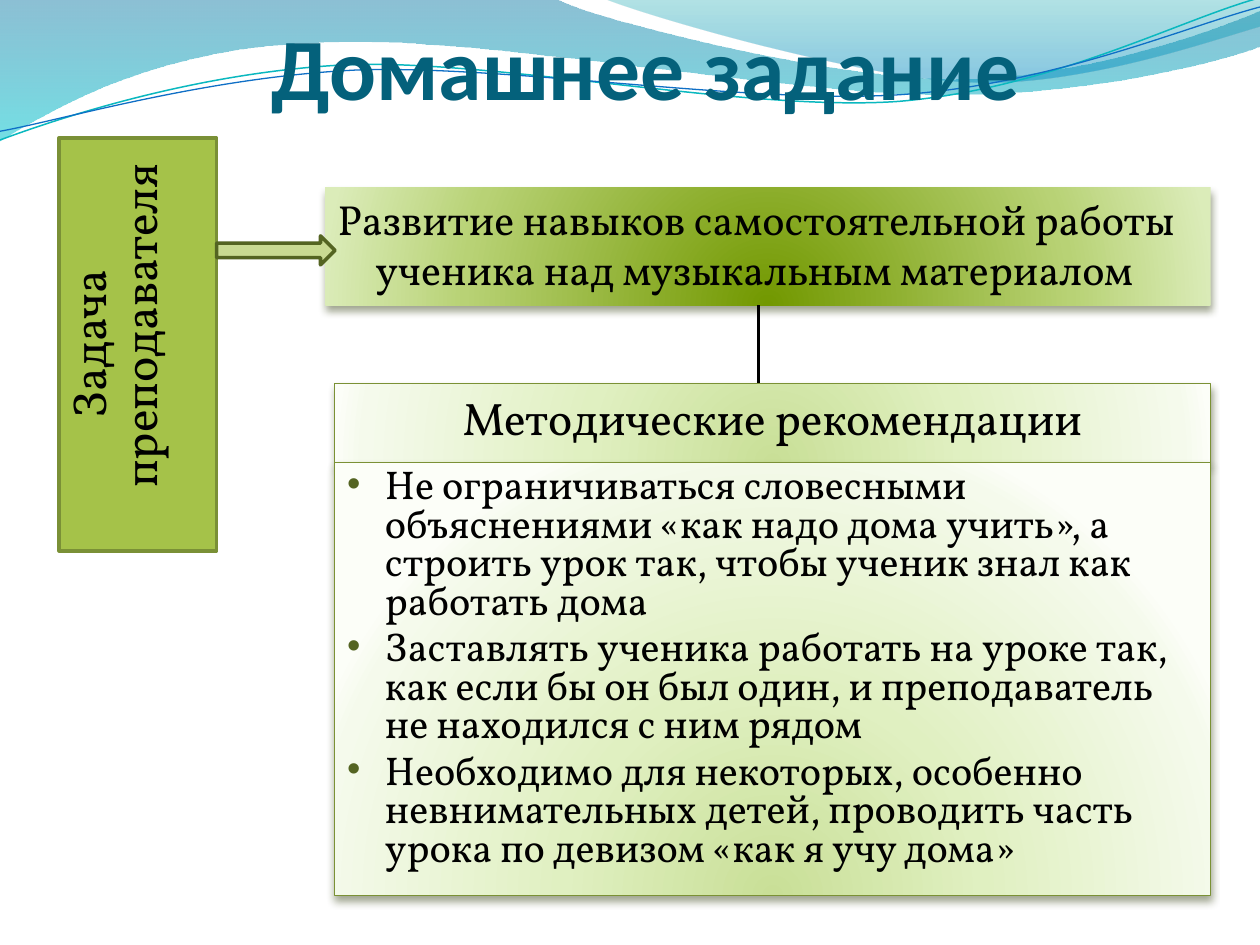
from lxml import etree
from pptx import Presentation
from pptx import util as u
from pptx.dml import color
from pptx.enum import shapes, text
from pptx.oxml import ns

Pt = u.Pt
SANS, SERIF = "Calibri", "Vollkorn"
HUE = {
    "title": "04617B", "ink": "000000", "task": "A5C249", "edge": "7A9036",
    "arrow": "C9DA92", "dark": "546422", "rim": "7B9135",
    "teal": "0AB8BF", "blue": "0F6FC6", "shade": "3A4519",
}
GOAL = [(0, "729800"), (68, "B8D275"), (100, "DBECB9")]
PALE = [(0, "C9DF97"), (43, "E0F0C1"), (93, "F5FAEC"), (100, "FCFEF8")]
WAVES = [
    ([(0, 0), (317, -1), (343, 12, 478, 45, 546, 45), (614, 45, 690, 19, 720, 6),
      (721, 26), (708, 32, 626, 55, 537, 54), (447, 54, 275, 20, 185, 24),
      (93, 26, 33, 60, -1, 81)], [(0, "0074A1", 45), (100, "00C6CF", 55)]),
    ([(345, -1), (366, 8, 491, 45, 554, 47), (616, 50, 692, 23, 720, 15),
      (720, 0)], [(0, "00A1A9", 30), (80, "008BBF", 45)]),
]
CURVES = [
    ([(0, 80), (35, 67, 114, 41, 199, 37), (284, 34, 427, 64, 513, 58),
      (600, 51, 675, 11, 719, -1)], "teal", 0.85),
    ([(0, 75), (34, 69, 118, 44, 204, 40), (290, 37, 430, 60, 516, 54),
      (602, 48, 678, 15, 720, 4)], "blue", 0.75),
]
TIPS = [
    "Не ограничиваться словесными объяснениями «как надо дома учить», а строить урок так, чтобы ученик знал как работать дома",
    "Заставлять ученика работать на уроке так, как если бы он был один, и преподаватель не находился с ним рядом",
    "Необходимо для некоторых, особенно невнимательных детей, проводить часть урока по девизом «как я учу дома»",
]


def rgb(key):
    """Return the named colour."""
    return color.RGBColor.from_string(HUE[key])


def sub(up, tag, **attrs):
    """Append a drawing element with its attributes."""
    return etree.SubElement(up, ns.qn("a:" + tag), {k: str(v) for k, v in attrs.items()})


def fade(shape, stops, glow=False):
    """Fill a shape with a vertical or a circular gradient."""
    shape.fill.gradient()
    grad = shape._element.spPr.find(ns.qn("a:gradFill"))
    for kid in list(grad):
        grad.remove(kid)
    row = sub(grad, "gsLst")
    for pos, val, *alpha in stops:
        tone = sub(sub(row, "gs", pos=pos * 1000), "srgbClr", val=val)
        for part in alpha:
            sub(tone, "alpha", val=part * 1000)
    if glow:
        way = sub(grad, "path", path="circle")
        sub(way, "fillToRect", l=50000, t=130000, r=50000, b=-30000)
    else:
        sub(grad, "lin", ang=5400000, scaled=1)


def edge(shape, key=None, width=1):
    """Outline a shape, or clear its outline when no colour is given."""
    shape.shadow.inherit = False
    if key:
        shape.line.color.rgb = rgb(key)
        shape.line.width = Pt(width)
    else:
        shape.line.fill.background()


def shade(shape):
    """Give a shape a soft shadow below it."""
    list_ = shape._element.spPr.find(ns.qn("a:effectLst"))
    cast = sub(list_, "outerShdw", blurRad=Pt(4.5), dist=Pt(3), dir=5400000, rotWithShape=0)
    sub(sub(cast, "srgbClr", val=HUE["shade"]), "alpha", val=48000)


def curve(slide, left, top, steps, close):
    """Draw an outline of straight and cubic steps from the given corner."""
    pts = [((left + x) * 100, (top + y) * 100)
           for step in steps for x, y in zip(step[::2], step[1::2])]
    pen = slide.shapes.build_freeform(*pts[0], scale=Pt(1) / 100)
    pen.add_line_segments(pts[1:], close=close)
    shape = pen.convert_to_shape()
    legs = iter(list(shape._element.iter(ns.qn("a:lnTo"))))
    for step in steps[1:]:
        first = next(legs)
        if len(step) == 6:
            first.tag = ns.qn("a:cubicBezTo")
            for _ in range(2):
                leg = next(legs)
                first.append(leg[0])
                leg.getparent().remove(leg)
    return shape


def crest(slide, left, top):
    """Draw the waves along the top and set them in the layout."""
    parts = []
    for steps, stops in WAVES:
        wave = curve(slide, left, top, steps, True)
        fade(wave, stops)
        edge(wave)
        parts.append(wave)
    for steps, key, width in CURVES:
        line = curve(slide, left, top, steps, False)
        line.fill.background()
        edge(line, key, width)
        parts.append(line)
    for part in parts:
        slide.slide_layout.shapes._spTree.append(part._element)


def head(slide, x, y, w, h):
    """Place the title above the waves."""
    title = slide.shapes.title
    title.left, title.top, title.width, title.height = map(Pt, (x, y, w, h))
    frame = title.text_frame
    frame.word_wrap = True
    frame.auto_size = text.MSO_AUTO_SIZE.NONE
    frame.vertical_anchor = text.MSO_ANCHOR.BOTTOM
    frame.margin_left = frame.margin_right = frame.margin_bottom = 0
    frame.margin_top = Pt(3.6)
    para = frame.paragraphs[0]
    para.alignment = text.PP_ALIGN.CENTER
    write(para, "Домашнее задание", 50, "title", SANS, True)


def write(para, words, size, key="ink", face=SERIF, bold=False):
    """Add one formatted run to a paragraph."""
    run = para.add_run()
    run.text = words
    font = run.font
    font.size, font.name, font.bold = Pt(size), face, bold
    font.color.rgb = rgb(key)


def panel(slide, x, y, w, h, lines, size, mid=False, lead=1.0, dots=False):
    """Add a rectangle with hanging, optionally bulleted paragraphs."""
    box = slide.shapes.add_shape(shapes.MSO_SHAPE.RECTANGLE, *map(Pt, (x, y, w, h)))
    frame = box.text_frame
    frame.word_wrap = True
    frame.vertical_anchor = text.MSO_ANCHOR.TOP
    for i, words in enumerate(lines):
        para = frame.add_paragraph() if i else frame.paragraphs[0]
        para.alignment = text.PP_ALIGN.CENTER if mid else text.PP_ALIGN.LEFT
        para.line_spacing = lead
        if i:
            para.space_before = Pt(size * 0.2)
        props = para._p.get_or_add_pPr()
        props.set("marL", str(Pt(21.6)))
        props.set("indent", str(-Pt(21.6)))
        if dots:
            sub(sub(props, "buClr"), "srgbClr", val=HUE["dark"])
            sub(props, "buSzPct", val=95000)
            sub(props, "buFont", typeface="Arial")
            sub(props, "buChar", char="•")
        write(para, words, size)
    return box


def task(slide, x, y, w, h):
    """Place the upright task label and the arrow leaving it."""
    box = panel(slide, x + (w - h) / 2, y + (h - w) / 2, h, w,
                ["Задача преподавателя"], 27.2, True, 0.9)
    box.rotation = 270
    box.fill.solid()
    box.fill.fore_color.rgb = rgb("task")
    edge(box, "edge", 2)
    arrow = slide.shapes.add_shape(shapes.MSO_SHAPE.RIGHT_ARROW,
                                   *map(Pt, (x + w, y + 56, 67.7, 16.6)))
    arrow.fill.solid()
    arrow.fill.fore_color.rgb = rgb("arrow")
    edge(arrow, "dark", 2)


def goal(slide, x, y, w, h):
    """Place the goal."""
    box = panel(slide, x, y, w, h, [
        "Развитие навыков самостоятельной работы ученика над музыкальным материалом"], 24)
    fade(box, GOAL, True)
    edge(box)
    shade(box)


def link(slide, x, y, h):
    """Run a line down from the goal to the advice."""
    line = slide.shapes.add_connector(shapes.MSO_CONNECTOR.STRAIGHT,
                                      *map(Pt, (x, y, x, y + h)))
    line.line.color.rgb = rgb("ink")
    line.line.width = Pt(1.5)
    sub(line._element.spPr, "effectLst")


def advice(slide, x, y, w, h, cap):
    """Place the advice heading over its list."""
    top = panel(slide, x, y, w, cap, ["Методические рекомендации"], 26, True)
    body = panel(slide, x, y + cap, w, h - cap, TIPS, 22.9, lead=0.8, dots=True)
    for box in (top, body):
        fade(box, PALE, True)
        edge(box, "rim", 0.75)
        shade(box)


def main():
    """Build and save the slide."""
    deck = Presentation()
    deck.slide_width, deck.slide_height = Pt(720), Pt(540)
    slide = deck.slides.add_slide(deck.slide_layouts[5])
    crest(slide, 0, 0)
    head(slide, 45, 0, 648, 67.5)
    goal(slide, 185.8, 107, 506, 67.5)
    task(slide, 33.8, 78.8, 90, 236)
    link(slide, 433.3, 174.5, 44.8)
    advice(slide, 191.3, 219.2, 500.6, 292.5, 45.2)
    deck.save("out.pptx")


if __name__ == "__main__":
    main()
